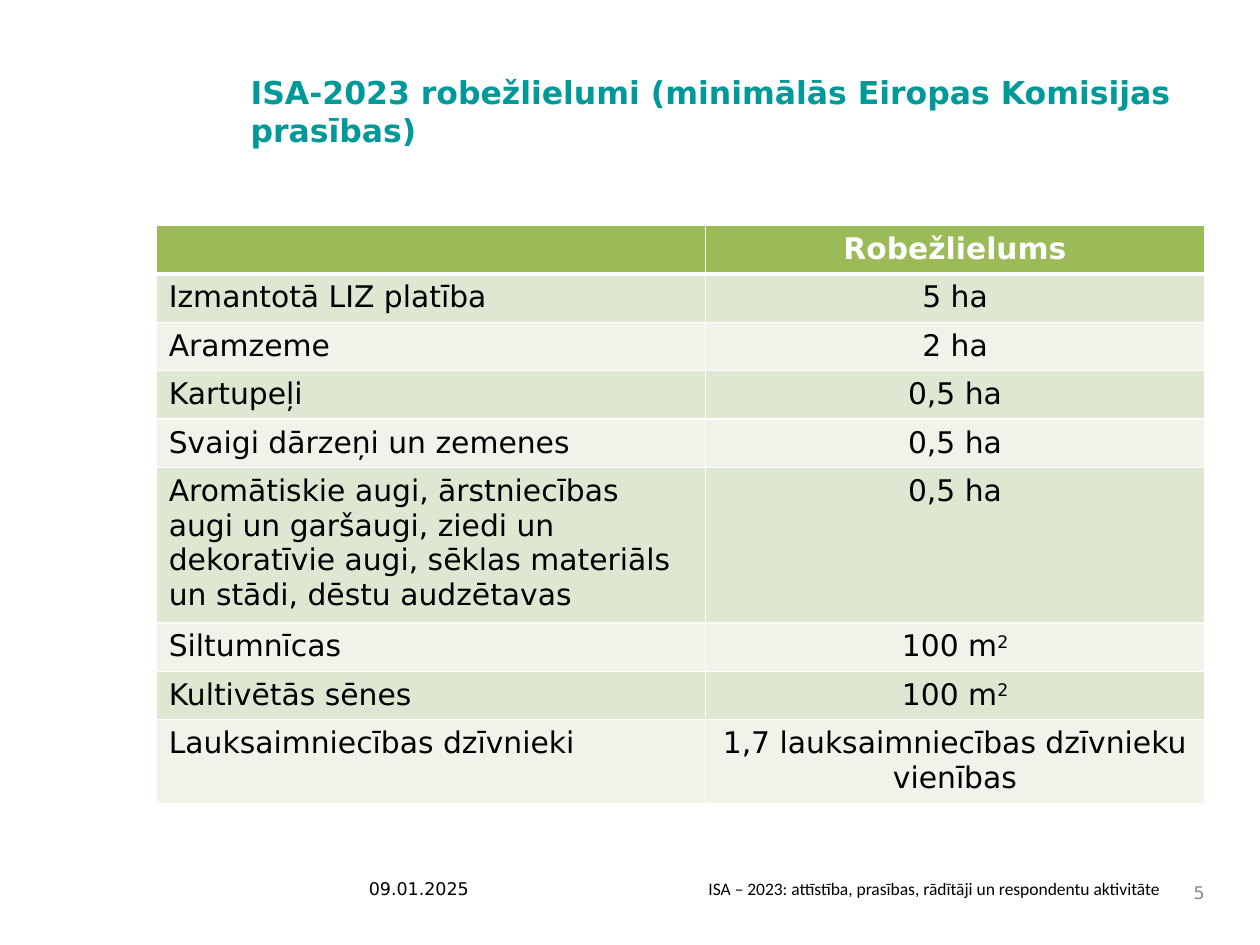
from lxml.etree import SubElement
from pptx import Presentation
from pptx.dml.color import RGBColor
from pptx.enum.text import MSO_ANCHOR, PP_ALIGN
from pptx.oxml.ns import qn
from pptx.util import Inches, Pt


def add_run(paragraph, text, size, color, bold=False, font="DejaVu Sans"):
    run = paragraph.add_run()
    run.text = text
    run.font.name = font
    run.font.size = Pt(size)
    run.font.bold = bold
    run.font.color.rgb = RGBColor.from_string(color)
    return run


def set_border(cell, side, width):
    line = SubElement(cell._tc.get_or_add_tcPr(), qn(f"a:ln{side}"), w=str(Pt(width)))
    SubElement(SubElement(line, qn("a:solidFill")), qn("a:srgbClr"), val="FFFFFF")


prs = Presentation()
prs.slide_width, prs.slide_height = Inches(10), Inches(7.5)
slide = prs.slides.add_slide(prs.slide_layouts[6])

# Title and footer texts
LEFT, RIGHT = PP_ALIGN.LEFT, PP_ALIGN.RIGHT
TOP, MIDDLE = MSO_ANCHOR.TOP, MSO_ANCHOR.MIDDLE
texts = [
    ("ISA-2023 robežlielumi (minimālās Eiropas Komisijas prasības)",
     (1.89, 0.53, 7.78, 0.72), LEFT, TOP, (18, "009999", True)),
    ("ISA – 2023: attīstība, prasības, rādītāji un respondentu aktivitāte",
     (5.3, 6.92, 4, 0.33), RIGHT, TOP, (10, "000000", False, "Calibri")),
    ("5", (9.19, 6.92, 0.47, 0.33), RIGHT, MIDDLE, (10, "898989")),
    ("09.01.2025", (2.83, 6.92, 2.17, 0.33), LEFT, TOP, (10, "000000")),
]
for text, place, align, anchor, style in texts:
    frame = slide.shapes.add_textbox(*map(Inches, place)).text_frame
    frame.word_wrap = True
    frame.vertical_anchor = anchor
    frame.paragraphs[0].alignment = align
    add_run(frame.paragraphs[0], text, *style)

# Threshold table: label, value, row height
thresholds = [
    ("", "Robežlielums", 0.37),
    ("Izmantotā LIZ platība", "5 ha", 0.37),
    ("Aramzeme", "2 ha", 0.37),
    ("Kartupeļi", "0,5 ha", 0.37),
    ("Svaigi dārzeņi un zemenes", "0,5 ha", 0.37),
    ("Aromātiskie augi, ārstniecības augi un garšaugi, ziedi un dekoratīvie augi, "
     "sēklas materiāls un stādi, dēstu audzētavas", "0,5 ha", 1.2),
    ("Siltumnīcas", "100 m²", 0.37),
    ("Kultivētās sēnes", "100 m²", 0.37),
    ("Lauksaimniecības dzīvnieki", "1,7 lauksaimniecības dzīvnieku vienības", 0.65),
]
table = slide.shapes.add_table(
    len(thresholds), 2, Inches(1.24), Inches(1.79), Inches(8.32), Inches(4.46)).table
table.columns[0].width, table.columns[1].width = Inches(4.36), Inches(3.96)

for r, (label, value, height) in enumerate(thresholds):
    table.rows[r].height = Inches(height)
    header = r == 0
    fill = "9BBB59" if header else ("EFF3EA", "DEE7D1")[r % 2]
    color = "FFFFFF" if header else "000000"
    for c, text in enumerate((label, value)):
        cell = table.cell(r, c)
        for side, width in (("L", 1), ("R", 1), ("T", 3 if r == 1 else 1),
                            ("B", 3 if header else 1)):
            set_border(cell, side, width)
        cell.fill.solid()
        cell.fill.fore_color.rgb = RGBColor.from_string(fill)
        paragraph = cell.text_frame.paragraphs[0]
        paragraph.alignment = PP_ALIGN.CENTER if c else LEFT
        if not text:
            # The empty corner keeps the text size so its row stays low
            SubElement(paragraph._p, qn("a:endParaRPr"), sz="1700")
            continue
        add_run(paragraph, text.removesuffix("²"), 17, color, header)
        if text.endswith("²"):
            exponent = add_run(paragraph, "2", 17, color)
            exponent.font._element.set("baseline", "30000")

prs.save("out.pptx")
